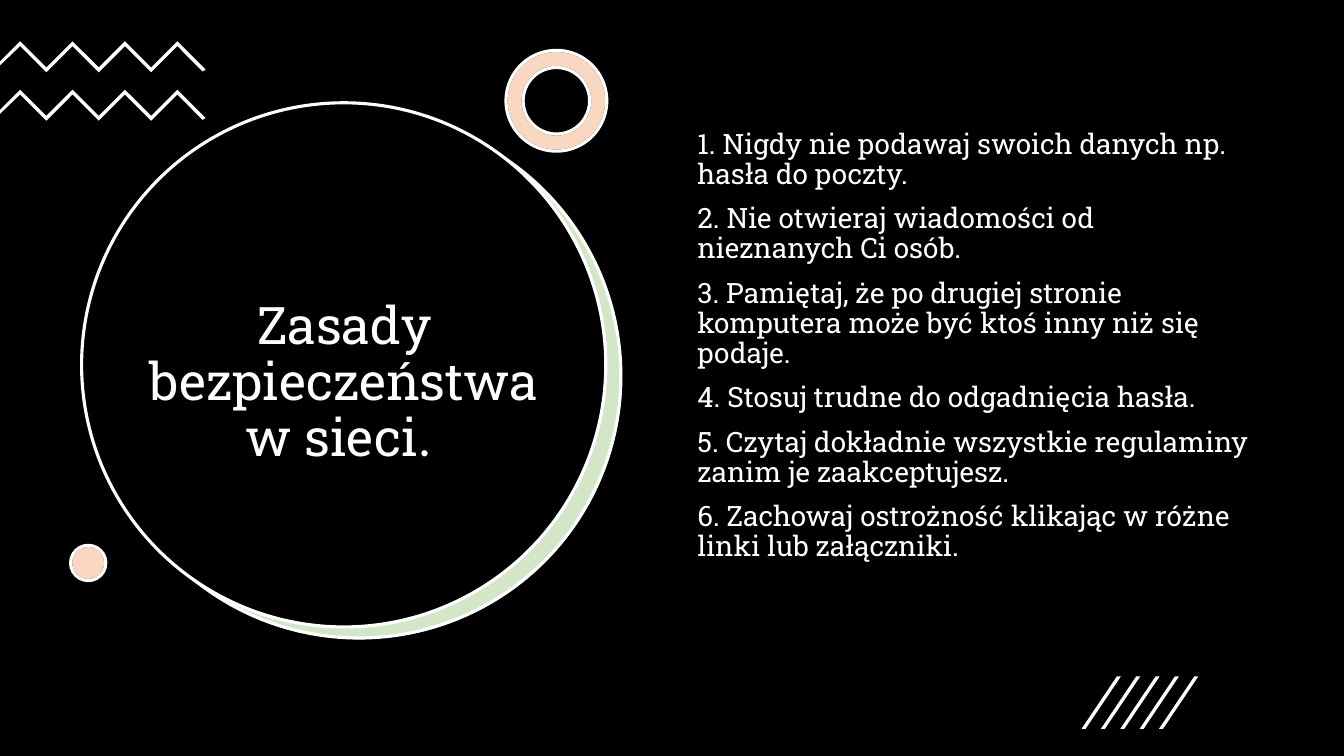
from dataclasses import dataclass
from typing import Optional

from lxml.etree import SubElement
from pptx import Presentation
from pptx.dml.color import RGBColor
from pptx.enum.shapes import MSO_SHAPE
from pptx.enum.text import MSO_ANCHOR, PP_ALIGN
from pptx.oxml.ns import qn
from pptx.util import Inches, Pt

COLS, ROWS = 133.33, 75
CELL = Inches(0.1)
FONT = "Roboto Slab"
HUES = {"black": "000000", "white": "FFFFFF", "green": "70AD47", "orange": "ED7D31"}
TITLE = [("Zasady bezpieczeństwa w sieci", FONT), (". ", "Calibri")]
RULES = [
    "1. Nigdy nie podawaj swoich danych np. hasła do poczty. ",
    "2. Nie otwieraj wiadomości od nieznanych Ci osób.",
    "3. Pamiętaj, że po drugiej stronie komputera może być ktoś inny niż się podaje. ",
    "4. Stosuj trudne do odgadnięcia hasła.",
    "5. Czytaj dokładnie wszystkie regulaminy zanim je zaakceptujesz.",
    "6. Zachowaj ostrożność klikając w różne linki lub załączniki. ",
]


@dataclass
class Form:
    kind: MSO_SHAPE
    col: float
    row: float
    wide: float
    high: float
    fill: str
    edge: Optional[str] = None
    alpha: int = 100
    hole: Optional[float] = None


OVAL, RING = MSO_SHAPE.OVAL, MSO_SHAPE.DONUT
FORMS = [
    Form(MSO_SHAPE.RECTANGLE, 0, 0, COLS, ROWS, "black"),
    Form(OVAL, 9.7, 11.4, 52, 52, "white"),
    Form(OVAL, 9.6, 11.3, 52, 52, "green", "white", 30),
    Form(OVAL, 8.1, 10.2, 52, 52, "black", "white"),
    Form(RING, 50.2, 5, 10, 10, "white", "black", hole=0.17),
    Form(RING, 50.2, 5, 10, 10, "orange", "white", 30, 0.17),
    Form(OVAL, 7, 54.1, 3.5, 3.5, "white", "black"),
    Form(OVAL, 7, 54.1, 3.5, 3.5, "orange", "white", 30),
]


def size(cells: float) -> int:
    return round(cells * CELL)


def tint(name: str) -> RGBColor:
    return RGBColor.from_string(HUES[name])


def paint(shape, fill: str, edge: Optional[str] = None, alpha: int = 100) -> None:
    shape.shadow.inherit = False
    shape.fill.solid()
    shape.fill.fore_color.rgb = tint(fill)
    if alpha < 100:
        color = shape.fill._xPr.find(qn("a:solidFill"))[0]
        SubElement(color, qn("a:alpha")).set("val", str(alpha * 1000))
    if edge:
        shape.line.color.rgb = tint(edge)
        shape.line.width = Pt(2.25)
    else:
        shape.line.fill.background()


def draw(slide, form: Form) -> None:
    box = [size(n) for n in (form.col, form.row, form.wide, form.high)]
    shape = slide.shapes.add_shape(form.kind, *box)
    if form.hole:
        shape.adjustments[0] = form.hole
    paint(shape, form.fill, form.edge, form.alpha)


def trace(slide, dots: list[tuple[float, float]]) -> None:
    spots = [(size(x), size(y)) for x, y in dots]
    pen = slide.shapes.build_freeform(*spots[0], scale=1.0)
    pen.add_line_segments(spots[1:], close=True)
    paint(pen.convert_to_shape(), "white")


def wave(slide, row: float) -> None:
    bends = [(2 + 2.6 * n, row + 2.6 * (n % 2)) for n in range(7)]
    under = [(x, y + 0.48) for x, y in reversed(bends)]
    tips = [(20.4, row + 2.8), (20.1, row + 3)]
    trace(slide, [(0, row + 2)] + bends + tips + under + [(0, row + 2.4)])


def slash(slide, col: float) -> None:
    trace(slide, [(col + 0.4, 72.3), (col, 72.3), (col + 3.5, 67.1), (col + 3.9, 67.1)])


def frame(slide, col: float, row: float, wide: float, high: float):
    box = slide.shapes.add_textbox(size(col), size(row), size(wide), size(high))
    box.text_frame.word_wrap = True
    return box.text_frame


def write(para, text: str, points: float, face: str) -> None:
    para.line_spacing = 0.9
    run = para.add_run()
    run.text = text
    run.font.size = Pt(points)
    run.font.name = face
    run.font.color.rgb = tint("white")


def main() -> None:
    deck = Presentation()
    deck.slide_width, deck.slide_height = size(COLS), size(ROWS)
    slide = deck.slides.add_slide(deck.slide_layouts[6])

    for form in FORMS:
        draw(slide, form)
    for row in (4.1, 8.9):
        wave(slide, row)
    for n in range(5):
        slash(slide, 107.3 + 1.92 * n)

    head = frame(slide, 12.1, 20.5, 44.1, 35.2)
    head.vertical_anchor = MSO_ANCHOR.MIDDLE
    head.paragraphs[0].alignment = PP_ALIGN.CENTER
    for text, face in TITLE:
        write(head.paragraphs[0], text, 37, face)

    body = frame(slide, 68.2, 12.4, 57.1, 47.6)
    for n, rule in enumerate(RULES):
        para = body.add_paragraph() if n else body.paragraphs[0]
        para.space_before = Pt(10 if n else 0)
        write(para, rule, 20, FONT)

    deck.save("out.pptx")


if __name__ == "__main__":
    main()
